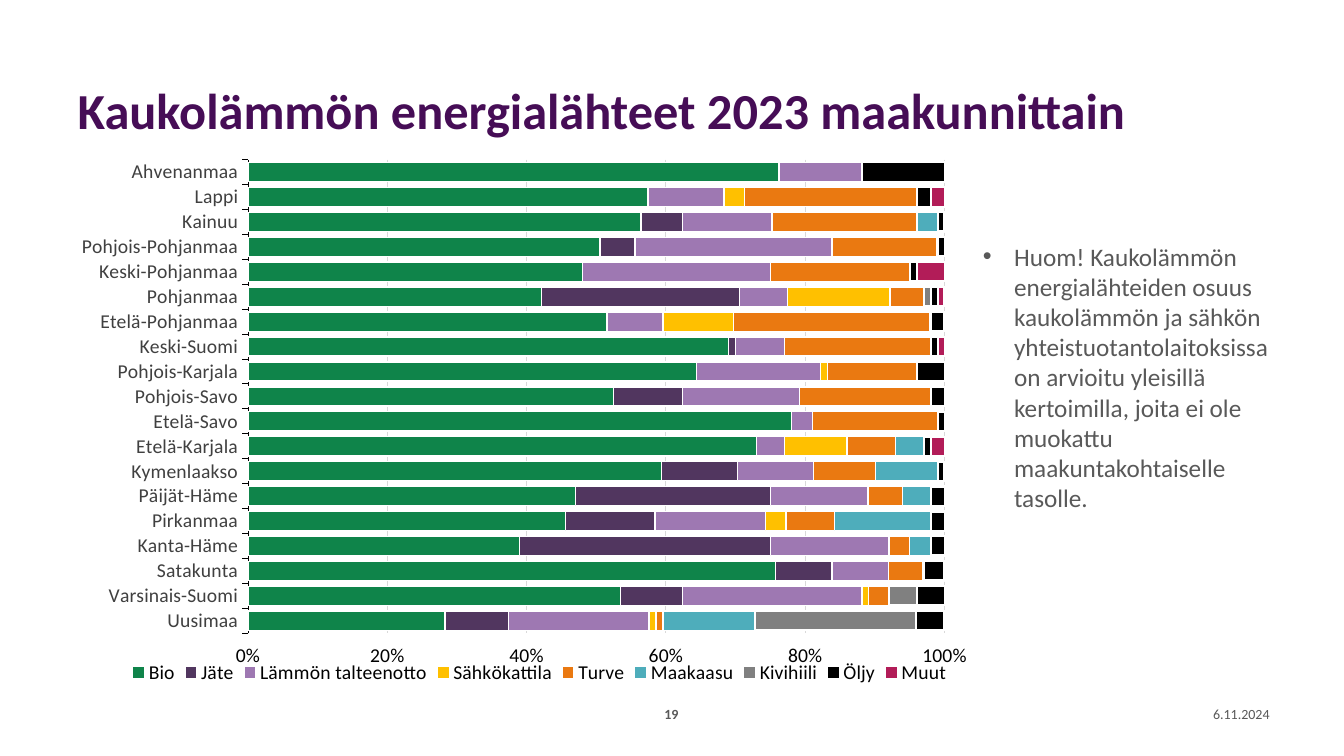
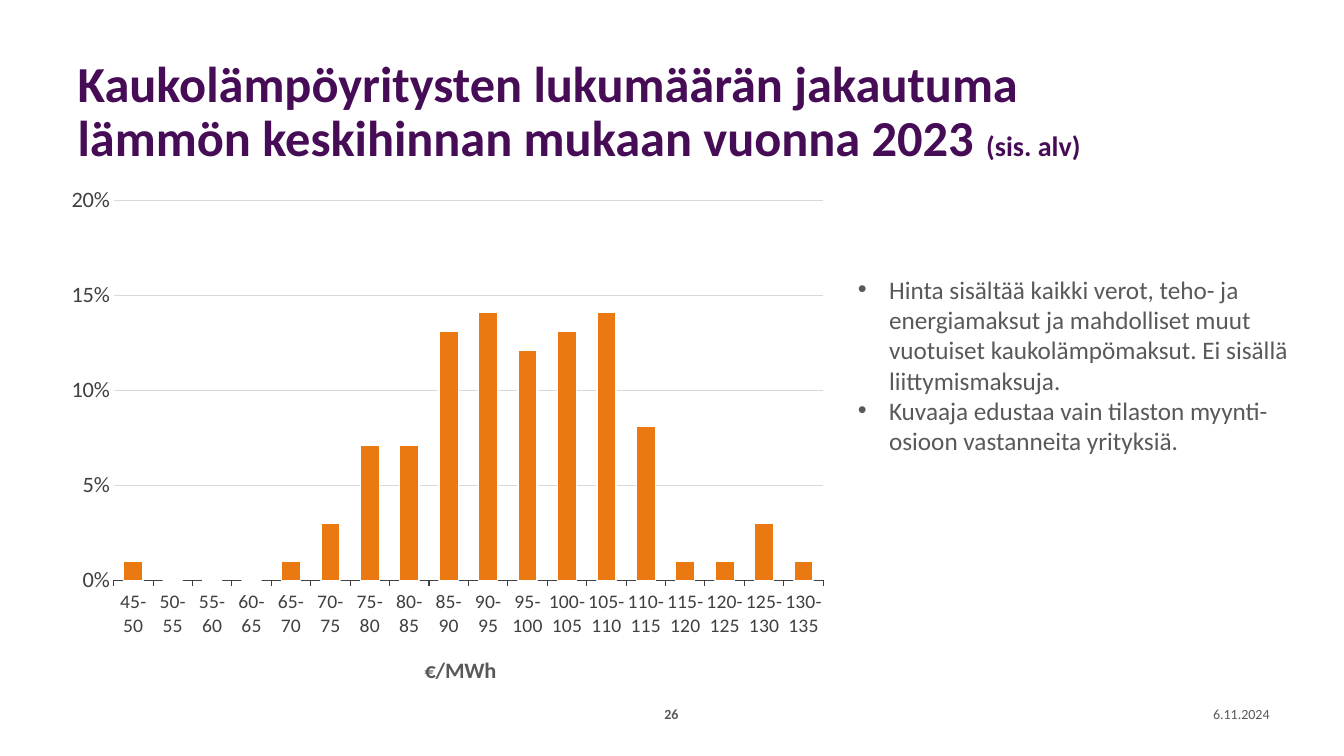
import pptx
import pptx.chart.data
import pptx.dml.color
import pptx.enum.chart
import pptx.enum.text
import pptx.oxml
import pptx.oxml.ns
import pptx.util
from pptx.enum.chart import XL_CHART_TYPE, XL_LEGEND_POSITION, XL_TICK_MARK
from pptx.enum.text import MSO_ANCHOR, MSO_AUTO_SIZE, PP_ALIGN

# Shared style: 100 px to the inch
PX = 9144
FONT = "Calibri"
PURPLE = "460D56"
GREY = "595959"
DARK = "404040"
BLACK = "000000"
WHITE = "FFFFFF"
GRID = "D9D9D9"
ORANGE = "EA7911"
DATE = "6.11.2024"
TITLE_ONLY = 5

# Slide 1 data: percentages for each region, from the bottom up
REGIONS = [
    "Uusimaa", "Varsinais-Suomi", "Satakunta", "Kanta-Häme", "Pirkanmaa",
    "Päijät-Häme", "Kymenlaakso", "Etelä-Karjala", "Etelä-Savo", "Pohjois-Savo",
    "Pohjois-Karjala", "Keski-Suomi", "Etelä-Pohjanmaa", "Pohjanmaa",
    "Keski-Pohjanmaa", "Pohjois-Pohjanmaa", "Kainuu", "Lappi", "Ahvenanmaa",
]
# Name, fill colour, outline width, values
SOURCES = [
    ("Bio", "0F844A", 1,
     [28, 54, 75, 39, 46, 47, 60, 73, 78, 53, 65, 69, 51, 43, 48, 50, 57, 58, 77]),
    ("Jäte", "51365F", 1,
     [9, 9, 8, 36, 13, 28, 11, 0, 0, 10, 0, 1, 0, 29, 0, 5, 6, 0, 0]),
    ("Lämmön talteenotto", "9E78B2", 1,
     [20, 26, 8, 17, 16, 14, 11, 4, 3, 17, 18, 7, 8, 7, 27, 28, 13, 11, 12]),
    ("Sähkökattila", "FFC000", 1,
     [1, 1, 0, 0, 3, 0, 0, 9, 0, 0, 1, 0, 10, 15, 0, 0, 0, 3, 0]),
    ("Turve", ORANGE, 1,
     [1, 3, 5, 3, 7, 5, 9, 7, 18, 19, 13, 21, 28, 5, 20, 15, 21, 25, 0]),
    ("Maakaasu", "4EADBB", 1,
     [13, 0, 0, 3, 14, 4, 9, 4, 0, 0, 0, 0, 0, 0, 0, 0, 3, 0, 0]),
    ("Kivihiili", "808080", 1.5,
     [23, 4, 0, 0, 0, 0, 0, 0, 0, 0, 0, 0, 0, 1, 0, 0, 0, 0, 0]),
    ("Öljy", BLACK, 1.5,
     [4, 4, 3, 2, 2, 2, 1, 1, 1, 2, 4, 1, 2, 1, 1, 1, 1, 2, 12]),
    ("Muut", "B21C58", 1.5,
     [0, 0, 0, 0, 0, 0, 0, 2, 0, 0, 0, 1, 0, 1, 4, 0, 0, 2, 0]),
]

# Slide 2 data: share of companies in each price band
PRICE_BANDS = [f"{low}-{low + 5}" for low in range(45, 135, 5)]
PRICE_SHARES = [
    ("Series 1", ORANGE, 1,
     [0.01, 0, 0, 0, 0.01, 0.03, 0.071, 0.071, 0.131,
      0.141, 0.121, 0.131, 0.141, 0.081, 0.01, 0.01, 0.03, 0.01]),
]


def rgb(color):
    return pptx.dml.color.RGBColor.from_string(color)


def emu(*lengths):
    return [length * PX for length in lengths]


def style_font(font, size, color, bold=False):
    font.name = FONT
    font.size = pptx.util.Pt(size)
    font.color.rgb = rgb(color)
    font.bold = bold


def style_line(line, color, width):
    line.color.rgb = rgb(color)
    line.width = pptx.util.Pt(width)


# Text
def add_title(slide, width, text, small_text=""):
    title = slide.shapes.title
    title.left, title.top, title.width, title.height = emu(67, 40, width, 145)
    frame = title.text_frame
    frame.auto_size = MSO_AUTO_SIZE.NONE
    frame.vertical_anchor = MSO_ANCHOR.MIDDLE
    frame.text = text
    paragraph = frame.paragraphs[0]
    paragraph.alignment = PP_ALIGN.LEFT
    paragraph.line_spacing = 0.9
    style_font(paragraph.runs[0].font, 36, PURPLE, True)
    if small_text:
        run = paragraph.add_run()
        run.text = small_text
        style_font(run.font, 20, PURPLE, True)


def add_text_box(slide, box):
    frame = slide.shapes.add_textbox(*emu(*box)).text_frame
    frame.word_wrap = True
    return frame


def add_footer_text(slide, box, text, alignment, bold=False):
    frame = add_text_box(slide, box)
    frame.vertical_anchor = MSO_ANCHOR.MIDDLE
    frame.text = text
    frame.paragraphs[0].alignment = alignment
    style_font(frame.paragraphs[0].runs[0].font, 10, GREY, bold)


def add_footer(slide, number):
    add_footer_text(slide, (636, 695, 60, 27), number, PP_ALIGN.CENTER, True)
    add_footer_text(slide, (1158, 695, 111, 27), DATE, PP_ALIGN.RIGHT)


def add_bullets(slide, box, items):
    frame = add_text_box(slide, box)
    frame.text = "\n".join(items)
    indent = 31 * PX
    for paragraph in frame.paragraphs:
        properties = paragraph._p.get_or_add_pPr()
        properties.set("marL", str(indent))
        properties.set("indent", str(-indent))
        namespace = pptx.oxml.ns.nsdecls("a")
        for markup in (f'<a:buFont {namespace} typeface="Arial"/>',
                       f'<a:buChar {namespace} char="•"/>'):
            properties.append(pptx.oxml.parse_xml(markup))
        style_font(paragraph.runs[0].font, 18, GREY)


# Charts
def set_layout(chart, tag, index, x, y, size=None):
    """Place a chart part by fractions of the chart, as child number index."""
    part = chart.element.find(".//" + pptx.oxml.ns.qn(tag))
    for layout in part.findall(pptx.oxml.ns.qn("c:layout")):
        part.remove(layout)
    target = '<c:layoutTarget val="inner"/>' if tag == "c:plotArea" else ""
    extent = f'<c:w val="{size[0]}"/><c:h val="{size[1]}"/>' if size else ""
    part.insert(index, pptx.oxml.parse_xml(
        f'<c:layout {pptx.oxml.ns.nsdecls("c")}><c:manualLayout>{target}'
        '<c:xMode val="edge"/><c:yMode val="edge"/>'
        f'<c:x val="{x}"/><c:y val="{y}"/>{extent}</c:manualLayout></c:layout>'))


def add_bar_chart(slide, chart_type, box, categories, series_rows, gap):
    data = pptx.chart.data.CategoryChartData()
    data.categories = categories
    for name, _, _, values in series_rows:
        data.add_series(name, values)
    chart = slide.shapes.add_chart(chart_type, *emu(*box), data).chart
    chart.has_title = False
    chart.has_legend = False
    style_font(chart.font, 10, BLACK)
    plot = chart.plots[0]
    plot.vary_by_categories = False
    plot.gap_width = gap
    for series, (_, color, outline, _) in zip(plot.series, series_rows):
        series.invert_if_negative = False
        series.format.fill.solid()
        series.format.fill.fore_color.rgb = rgb(color)
        style_line(series.format.line, WHITE, outline)
    return chart


def style_category_axis(axis, color):
    axis.has_major_gridlines = False
    axis.major_tick_mark = XL_TICK_MARK.OUTSIDE
    style_font(axis.tick_labels.font, 14, DARK)
    style_line(axis.format.line, color, 0.75)


def style_value_axis(axis, size, color, step, maximum, tick_mark, grid_width):
    axis.minimum_scale = 0
    axis.maximum_scale = maximum
    axis.major_unit = step
    axis.major_tick_mark = tick_mark
    axis.format.line.fill.background()
    style_line(axis.major_gridlines.format.line, GRID, grid_width)
    axis.tick_labels.number_format = "0%"
    axis.tick_labels.number_format_is_linked = False
    style_font(axis.tick_labels.font, size, color)


def add_legend(chart):
    chart.has_legend = True
    chart.legend.position = XL_LEGEND_POSITION.BOTTOM
    chart.legend.include_in_layout = False
    style_font(chart.legend.font, 14, BLACK)
    set_layout(chart, "c:legend", 1, 0.06, 0.92, (0.91, 0.06))


def add_axis_title(chart, text):
    frame = chart.category_axis.axis_title.text_frame
    frame.text = text
    style_font(frame.paragraphs[0].runs[0].font, 16, GREY, True)
    set_layout(chart, "c:title", 1, 0.46, 0.94)


# Slides
def add_slide(presentation, number):
    slide = presentation.slides.add_slide(presentation.slide_layouts[TITLE_ONLY])
    add_footer(slide, number)
    return slide


def add_energy_sources_slide(presentation):
    slide = add_slide(presentation, "19")
    add_title(slide, 1158, "Kaukolämmön energialähteet 2023 maakunnittain")
    add_bullets(slide, (965, 234, 327, 283), [
        "Huom! Kaukolämmön energialähteiden osuus kaukolämmön ja sähkön "
        "yhteistuotantolaitoksissa on arvioitu yleisillä kertoimilla, joita ei ole "
        "muokattu maakuntakohtaiselle tasolle.",
    ])
    chart = add_bar_chart(slide, XL_CHART_TYPE.BAR_STACKED_100, (67, 144, 909, 551),
                          REGIONS, SOURCES, 30)
    chart.plots[0].overlap = 100
    set_layout(chart, "c:plotArea", 0, 0.197, 0.026, (0.76, 0.853))
    style_category_axis(chart.category_axis, BLACK)
    style_value_axis(chart.value_axis, 14, BLACK, 0.2, 1, XL_TICK_MARK.OUTSIDE, 0.75)
    add_legend(chart)


def add_price_distribution_slide(presentation):
    slide = add_slide(presentation, "26")
    add_title(slide, 1026,
              "Kaukolämpöyritysten lukumäärän jakautuma lämmön keskihinnan "
              "mukaan vuonna 2023 ", "(sis. alv)")
    add_bullets(slide, (841, 267, 455, 222), [
        "Hinta sisältää kaikki verot, teho- ja energiamaksut ja mahdolliset muut "
        "vuotuiset kaukolämpömaksut. Ei sisällä liittymismaksuja.",
        "Kuvaaja edustaa vain tilaston myynti-osioon vastanneita yrityksiä.",
    ])
    chart = add_bar_chart(slide, XL_CHART_TYPE.COLUMN_CLUSTERED, (67, 185, 761, 501),
                          PRICE_BANDS, PRICE_SHARES, 106)
    set_layout(chart, "c:plotArea", 0, 0.06, 0.028, (0.925, 0.768))
    style_category_axis(chart.category_axis, DARK)
    style_value_axis(chart.value_axis, 16, DARK, 0.05, 0.2, XL_TICK_MARK.NONE, 0.5)
    add_axis_title(chart, "€/MWh")


def main():
    presentation = pptx.Presentation()
    presentation.slide_width, presentation.slide_height = emu(1333, 750)
    add_energy_sources_slide(presentation)
    add_price_distribution_slide(presentation)
    presentation.save("out.pptx")


if __name__ == "__main__":
    main()
